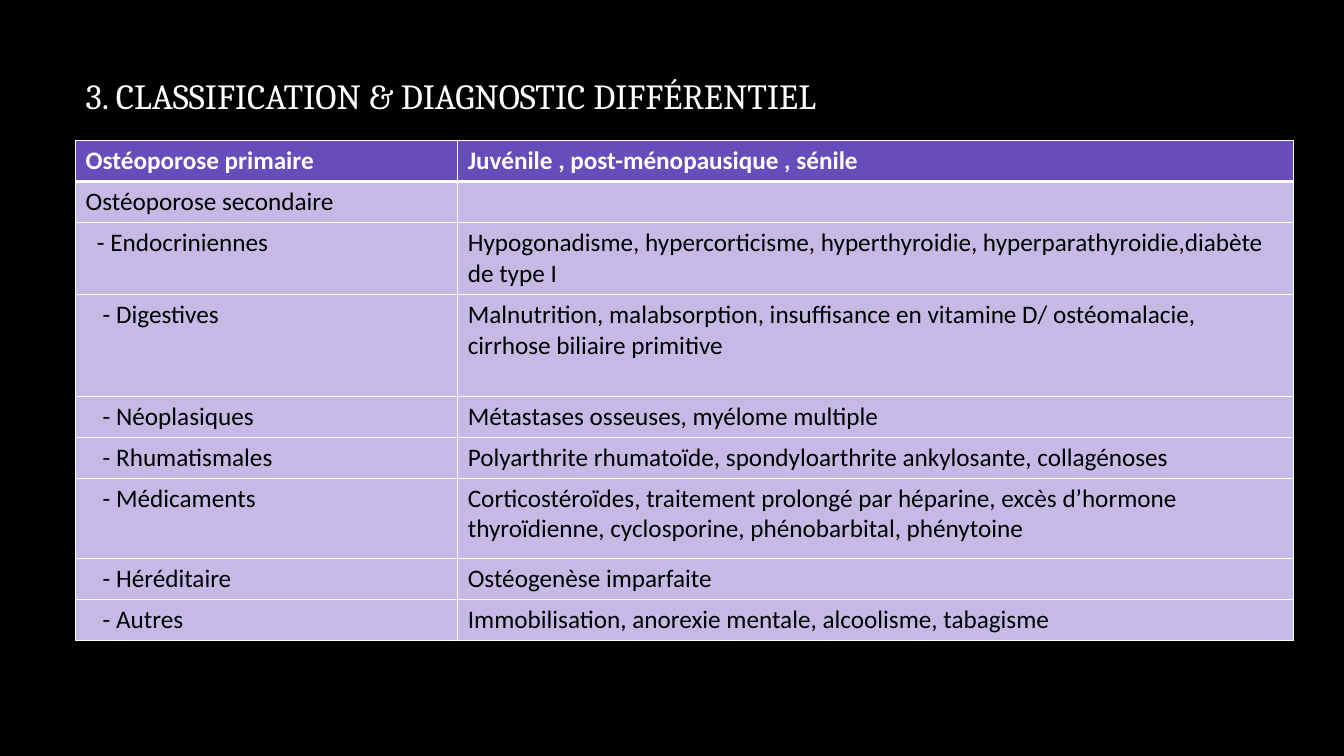
import pptx
import pptx.util
import pptx.dml.color
import pptx.enum.text
import pptx.oxml
import pptx.oxml.ns
import lxml.etree

Pt = pptx.util.Pt
Enum = pptx.enum.text

HUES = {"back": "000000", "head": "674DBB", "body": "C4BAE5",
        "light": "FFFFFF", "dark": "000000"}
FONTS = {
    "title": {"name": "Cambria", "size": Pt(25.2), "bold": False},
    "head": {"name": "Calibri", "size": Pt(18), "bold": True},
    "body": {"name": "Calibri", "size": Pt(18), "bold": False},
}
FRAME = {"word_wrap": True, "auto_size": Enum.MSO_AUTO_SIZE.NONE,
         "vertical_anchor": Enum.MSO_ANCHOR.MIDDLE}
INSET = 7.2
LINE = 29.2
ROWS = [
    (LINE, 0, "Ostéoporose primaire", "Juvénile , post-ménopausique , sénile"),
    (LINE, 0, "Ostéoporose secondaire", ""),
    (51.4, 8.1, "- Endocriniennes",
     "Hypogonadisme, hypercorticisme, hyperthyroidie, "
     "hyperparathyroidie,diabète de type I"),
    (72.9, 12.2, "- Digestives",
     "Malnutrition, malabsorption, insuffisance en vitamine D/ ostéomalacie, "
     "cirrhose biliaire primitive"),
    (LINE, 12.2, "- Néoplasiques", "Métastases osseuses, myélome multiple"),
    (LINE, 12.2, "- Rhumatismales",
     "Polyarthrite rhumatoïde, spondyloarthrite ankylosante, collagénoses"),
    (57.6, 12.2, "- Médicaments",
     "Corticostéroïdes, traitement prolongé par héparine, excès d’hormone "
     "thyroïdienne, cyclosporine, phénobarbital, phénytoine"),
    (LINE, 12.2, "- Héréditaire", "Ostéogenèse imparfaite"),
    (LINE, 12.2, "- Autres",
     "Immobilisation, anorexie mentale, alcoolisme, tabagisme"),
]


def tint(name):
    """Return the named colour."""
    return pptx.dml.color.RGBColor.from_string(HUES[name])


def apply(item, values):
    """Set each attribute in values on item."""
    for key, value in values.items():
        setattr(item, key, value)


def style(par, kind, hue):
    """Format one paragraph."""
    apply(par.font, FONTS[kind])
    par.font.color.rgb = tint(hue)


def edge(cell, widths):
    """Draw the white borders of a cell."""
    props = cell._tc.get_or_add_tcPr()
    for spot, (side, width) in enumerate(widths.items()):
        line = lxml.etree.Element(pptx.oxml.ns.qn("a:ln" + side), w=str(Pt(width)))
        fill = lxml.etree.SubElement(line, pptx.oxml.ns.qn("a:solidFill"))
        lxml.etree.SubElement(fill, pptx.oxml.ns.qn("a:srgbClr"), val=HUES["light"])
        props.insert(spot, line)


def add_title(slide, box, text):
    """Place the slide title in the box."""
    title = slide.shapes.title
    apply(title, dict(zip(("left", "top", "width", "height"), map(Pt, box))))
    frame = title.text_frame
    frame.text = text
    apply(frame, FRAME)
    par = frame.paragraphs[0]
    par.alignment = Enum.PP_ALIGN.LEFT
    style(par, "title", "light")


def add_grid(slide, box, split):
    """Place the table in the box, its first column split wide."""
    left, top, width, height = box
    grid = slide.shapes.add_table(len(ROWS), 2, *map(Pt, box)).table
    for col, size in zip(grid.columns, (split, width - split)):
        col.width = Pt(size)
    for row, (tall, shift, *texts) in enumerate(ROWS):
        grid.rows[row].height = Pt(tall)
        kind, hue = ("body", "dark") if row else ("head", "light")
        for col, text in enumerate(texts):
            cell = grid.cell(row, col)
            cell.text = text
            cell.margin_left = Pt(INSET + (0 if col else shift))
            cell.fill.solid()
            cell.fill.fore_color.rgb = tint(kind)
            style(cell.text_frame.paragraphs[0], kind, hue)
            edge(cell, {"L": 1, "R": 1, "T": 3 if row == 1 else 1,
                        "B": 1 if row else 3})


def main():
    """Build and save the slide."""
    deck = pptx.Presentation()
    apply(deck, {"slide_width": Pt(960), "slide_height": Pt(540)})
    slide = deck.slides.add_slide(deck.slide_layouts[5])
    slide.background.fill.solid()
    slide.background.fill.fore_color.rgb = tint("back")
    add_title(slide, (54, 48.3, 798, 39),
              "3. CLASSIFICATION & DIAGNOSTIC DIFFÉRENTIEL")
    add_grid(slide, (54, 100.5, 870, sum(row[0] for row in ROWS)), 273)
    deck.save("out.pptx")


if __name__ == "__main__":
    main()
